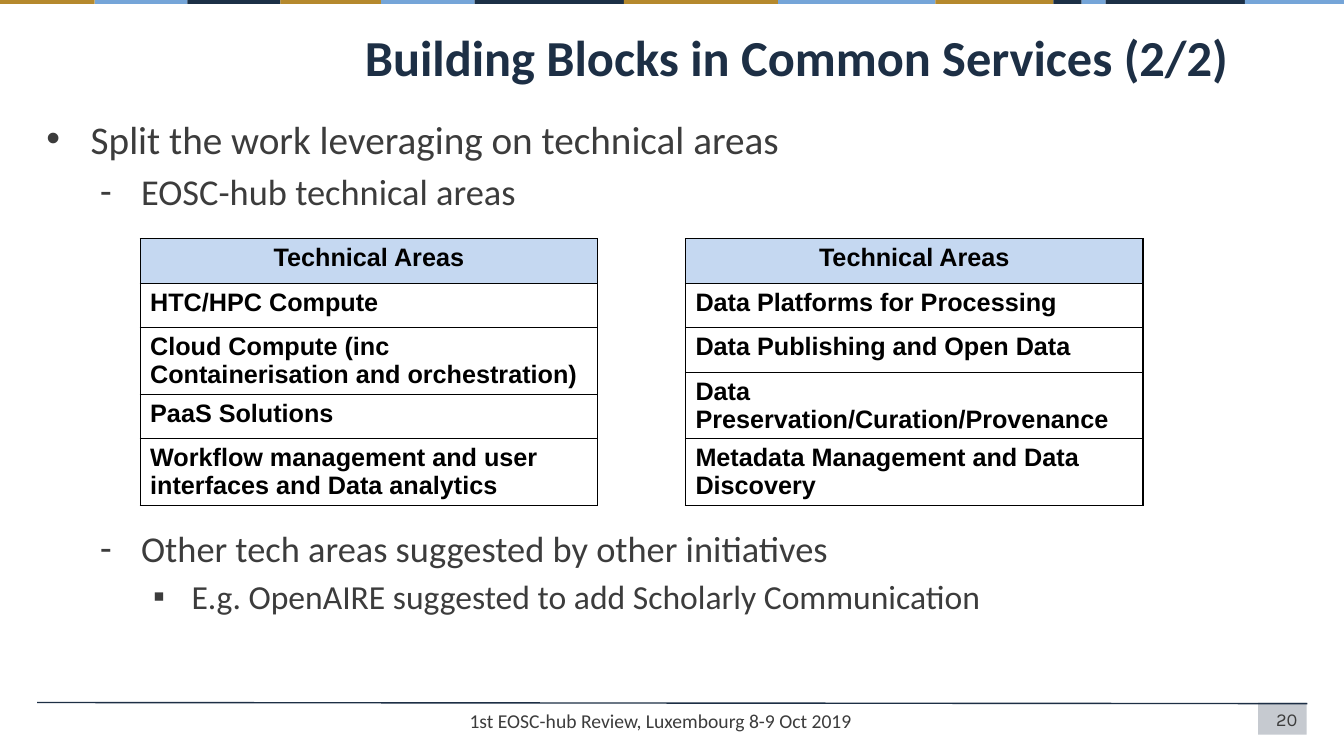
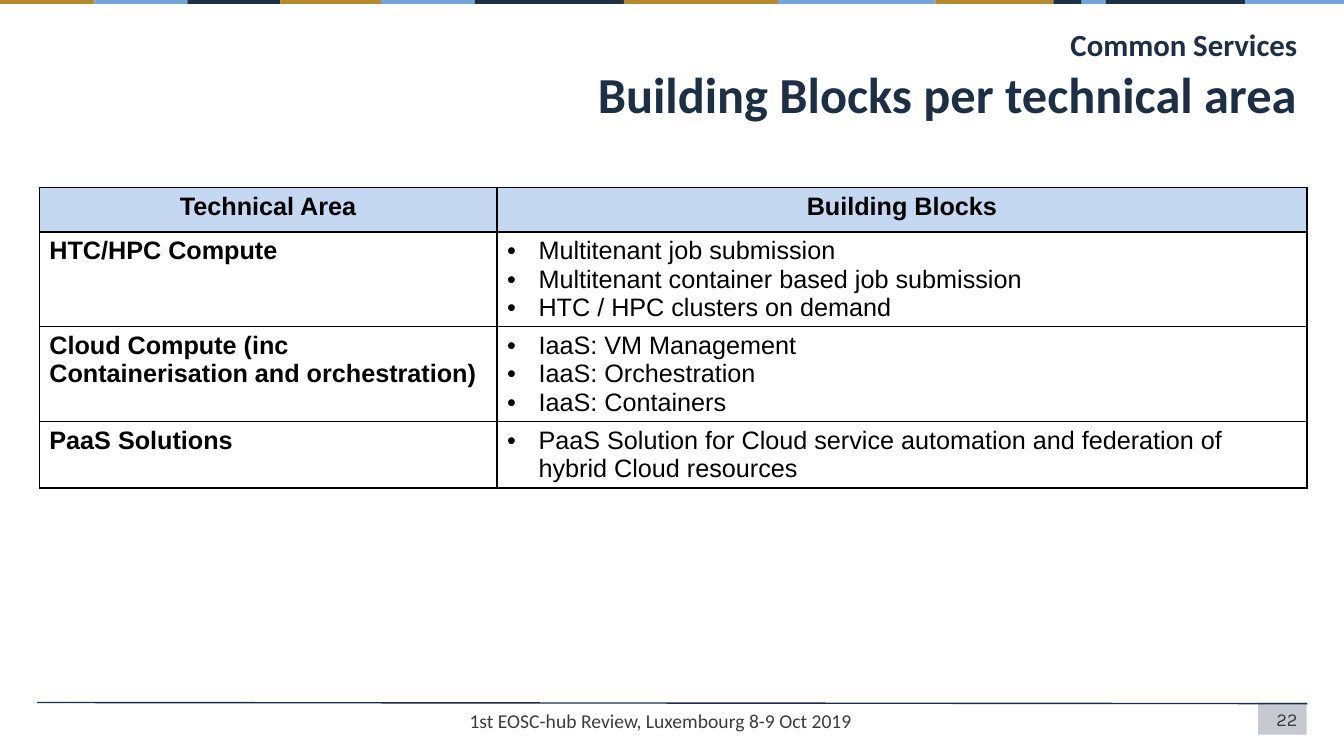
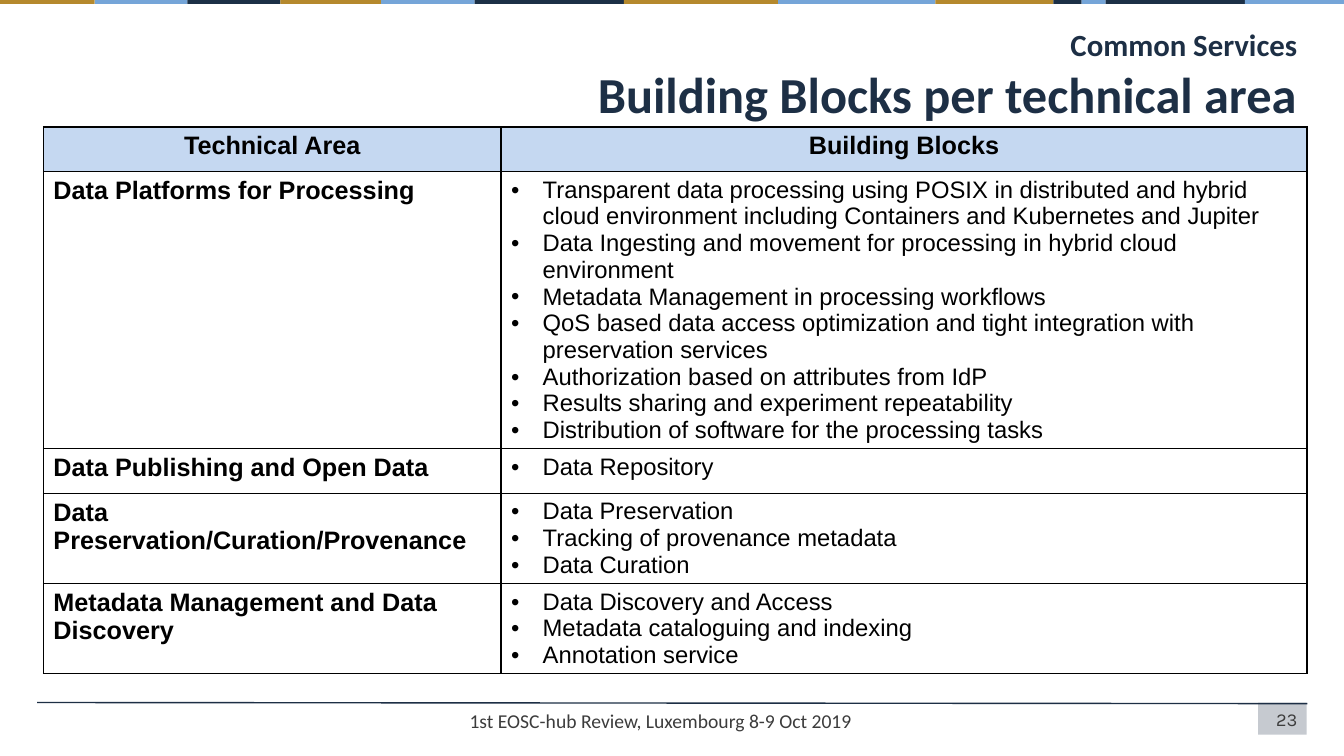
import copy

import pptx
import pptx.dml.color
import pptx.enum.shapes
import pptx.enum.text
import pptx.oxml
import pptx.oxml.ns
import pptx.util

Pt = pptx.util.Pt
ALIGN = pptx.enum.text.PP_ALIGN
RECT = pptx.enum.shapes.MSO_SHAPE.RECTANGLE

COLORS = {
    "title": "1D2F45", "text": "3C3C3C", "black": "000000", "white": "FFFFFF",
    "header": "C5D8F1", "navy": "1C3046", "gold": "B5892D", "blue": "75A5D8",
}
# Colour and right edge of each segment of the top band
BAND = [
    ("gold", 67.7), ("blue", 133.9), ("navy", 200.2), ("gold", 272.2),
    ("blue", 339.1), ("navy", 445.7), ("gold", 555.8), ("blue", 668.2),
    ("gold", 752.4), ("navy", 772.6), ("blue", 789.8), ("navy", 889.2),
    ("blue", 960),
]
FOOTER = "1st EOSC-hub Review, Luxembourg 8-9 Oct 2019"
ROW_HEIGHT = 31.8
AREA_WIDTH = 326.9

COMPUTE_AREAS = [
    "HTC/HPC Compute",
    "Cloud Compute (inc Containerisation and orchestration)",
    "PaaS Solutions",
    "Workflow management and user interfaces and Data analytics",
]
DATA_AREAS = [
    "Data Platforms for Processing",
    "Data Publishing and Open Data",
    "Data Preservation/Curation/Provenance",
    "Metadata Management and Data Discovery",
]
COMPUTE_BLOCKS = [
    ["Multitenant job submission",
     "Multitenant container based job submission",
     "HTC / HPC clusters on demand"],
    ["IaaS: VM Management", "IaaS: Orchestration", "IaaS: Containers"],
    ["PaaS Solution for Cloud service automation and federation of hybrid "
     "Cloud resources"],
]
DATA_BLOCKS = [
    ["Transparent data processing using POSIX in distributed and hybrid cloud "
     "environment including Containers and Kubernetes and Jupiter",
     "Data Ingesting and movement for processing in hybrid cloud environment",
     "Metadata Management in processing workflows",
     "QoS based data access optimization and tight integration with "
     "preservation services",
     "Authorization based on attributes from IdP",
     "Results sharing and experiment repeatability",
     "Distribution of software for the processing tasks"],
    ["Data Repository"],
    ["Data Preservation", "Tracking of provenance metadata", "Data Curation"],
    ["Data Discovery and Access", "Metadata cataloguing and indexing",
     "Annotation service"],
]


def rgb(name):
    return pptx.dml.color.RGBColor.from_string(COLORS[name])


def xml(tag, inner="", attrs=""):
    return pptx.oxml.parse_xml(
        f'<a:{tag} {pptx.oxml.ns.nsdecls("a")} {attrs}>{inner}</a:{tag}>')


def place(sp, left, top, width, height):
    sp.left, sp.top, sp.width, sp.height = map(Pt, (left, top, width, height))


def format_run(r, size, font, color, bold=False):
    r.font.size, r.font.name, r.font.bold = Pt(size), font, bold
    r.font.color.rgb = rgb(color)


def add_bullet(p, char, color, left, hanging):
    pPr = p._p.get_or_add_pPr()
    pPr.set("marL", str(Pt(left)))
    pPr.set("indent", str(-Pt(hanging)))
    pPr.append(xml("buClr", f'<a:srgbClr val="{COLORS[color]}"/>'))
    pPr.append(xml("buFont", attrs='typeface="Arial"'))
    pPr.append(xml("buChar", attrs=f'char="{char}"'))


def add_rect(s, left, top, width, height, color):
    sp = s.shapes.add_shape(RECT, Pt(left), Pt(top), Pt(width), Pt(height))
    sp.shadow.inherit = False
    sp.fill.solid()
    sp.fill.fore_color.rgb = rgb(color)
    sp.line.fill.background()
    return sp


def decorate_master(prs, s):
    """Draw the top band and footer rule on s, then move them to the master."""
    number_box = add_rect(s, 898.6, 501.8, 34.8, 23, "title")
    number_box.element.spPr.find(".//" + pptx.oxml.ns.qn("a:srgbClr")).append(
        xml("alpha", attrs='val="25000"'))
    rule = s.shapes.add_connector(
        pptx.enum.shapes.MSO_CONNECTOR.STRAIGHT,
        Pt(933.8), Pt(502.6), Pt(26.6), Pt(501.8))
    rule.line.color.rgb = rgb("title")
    rule.line.width = Pt(1)
    rule.element.spPr.append(xml("effectLst"))
    shapes = [number_box, rule]
    left = 0
    for color, right in BAND:
        shapes.append(add_rect(s, left, 0, right - left, 2.9, color))
        left = right
    for shape_id, sp in enumerate(shapes, 100):
        sp.element.xpath(".//p:cNvPr")[0].set("id", str(shape_id))
        prs.slide_master.shapes.element.append(sp.element)


def add_title(s, text, sizes, align):
    """Fill the title; each line, split by a vertical tab, has its own size."""
    sp = s.shapes.title
    place(sp, 253.4, 15.1, 680.4, 42.5)
    tf = sp.text_frame
    tf.auto_size = pptx.enum.text.MSO_AUTO_SIZE.NONE
    tf.vertical_anchor = pptx.enum.text.MSO_ANCHOR.TOP
    p = tf.paragraphs[0]
    p.text = text
    p.alignment = align
    for r, size in zip(p.runs, sizes):
        format_run(r, size, "Calibri", "title", True)
    for br in p._p.findall(pptx.oxml.ns.qn("a:br")):
        br.insert(0, copy.deepcopy(p.runs[0].font._element))


def add_body(s, items):
    """Fill the body with (text, level, space before) items."""
    styles = [("•", 28, 36, 31.7), ("-", 26, 72, 29.5), ("▪", 24, 108, 27.4)]
    sp = s.placeholders[1]
    place(sp, 21.6, 78.5, 907.2, 382.3)
    tf = sp.text_frame
    tf.auto_size = pptx.enum.text.MSO_AUTO_SIZE.NONE
    for i, (text, level, space) in enumerate(items):
        p = tf.add_paragraph() if i else tf.paragraphs[0]
        char, size, left, hanging = styles[level]
        p.text, p.level = text, level
        add_bullet(p, char, "text", left, hanging)
        p.space_before = Pt(space)
        format_run(p.runs[0], size, "Calibri", "text")


def add_text(s, left, width, text, size, font, align):
    sp = s.shapes.add_textbox(Pt(left), Pt(502.6), Pt(width), Pt(22.3))
    tf = sp.text_frame
    tf.word_wrap = True
    p = tf.paragraphs[0]
    p.text = text
    p.alignment = align
    format_run(p.runs[0], size, font, "text")


def add_footer(s, number):
    add_text(s, 688.3, 245.5, str(number), 13, "Karla", ALIGN.RIGHT)
    add_text(s, 328.3, 303.8, FOOTER, 14, "Calibri", ALIGN.LEFT)


def format_cell(cell, content, is_header, list_size):
    """Fill a cell with a bold string or a bulleted list of strings."""
    cell.fill.solid()
    cell.fill.fore_color.rgb = rgb("header" if is_header else "white")
    for i, side in enumerate("LRTB"):
        cell._tc.get_or_add_tcPr().insert(i, xml(
            f"ln{side}",
            f'<a:solidFill><a:srgbClr val="{COLORS["black"]}"/></a:solidFill>',
            f'w="{Pt(1)}"'))
    is_list = isinstance(content, list)
    cell.text_frame.text = "\n".join(content) if is_list else content
    for p in cell.text_frame.paragraphs:
        p.alignment = ALIGN.CENTER if is_header else ALIGN.LEFT
        if is_list:
            add_bullet(p, "•", "black", 22.5, 22.5)
        format_run(p.runs[0], list_size if is_list else 18, "Arial", "black",
                   not is_list)


def add_table(s, left, top, widths, rows, list_size=18):
    table = s.shapes.add_table(
        len(rows), len(widths), Pt(left), Pt(top), Pt(sum(widths)),
        Pt(ROW_HEIGHT * len(rows))).table
    table.first_row = table.horz_banding = False
    for column, width in zip(table.columns, widths):
        column.width = Pt(width)
    for i, row in enumerate(rows):
        for j, content in enumerate(row):
            format_cell(table.cell(i, j), content, i == 0, list_size)


def add_blocks_slide(prs, number, left, top, areas, blocks, list_size):
    s = prs.slides.add_slide(prs.slide_layouts[5])
    add_title(s, "Common Services\vBuilding Blocks per technical area",
              (22, 36), ALIGN.RIGHT)
    rows = [("Technical Area", "Building Blocks"), *zip(areas, blocks)]
    add_table(s, left, top, (AREA_WIDTH, 933.6 - left - AREA_WIDTH), rows,
              list_size)
    add_footer(s, number)


def add_areas_slide(prs, number):
    s = prs.slides.add_slide(prs.slide_layouts[1])
    decorate_master(prs, s)
    add_title(s, "Building Blocks in Common Services (2/2)", (36,), ALIGN.LEFT)
    add_body(s, [
        ("Split the work leveraging on technical areas", 0, 0),
        ("EOSC-hub technical areas", 1, 5.2),
        ("Other tech areas suggested by other initiatives", 1, 223.4),
        ("E.g. OpenAIRE suggested to add Scholarly Communication", 2, 4.8),
    ])
    for left, areas in ((100.1, COMPUTE_AREAS), (489.6, DATA_AREAS)):
        rows = [(text,) for text in ["Technical Areas", *areas]]
        add_table(s, left, 170.6, (AREA_WIDTH,), rows)
    add_footer(s, number)


def main():
    prs = pptx.Presentation()
    prs.slide_width, prs.slide_height = Pt(960), Pt(540)
    add_areas_slide(prs, 20)
    add_blocks_slide(prs, 22, 28.1, 133.9, COMPUTE_AREAS, COMPUTE_BLOCKS, 18)
    add_blocks_slide(prs, 23, 31, 90.7, DATA_AREAS, DATA_BLOCKS, 17)
    prs.save("out.pptx")


if __name__ == "__main__":
    main()
